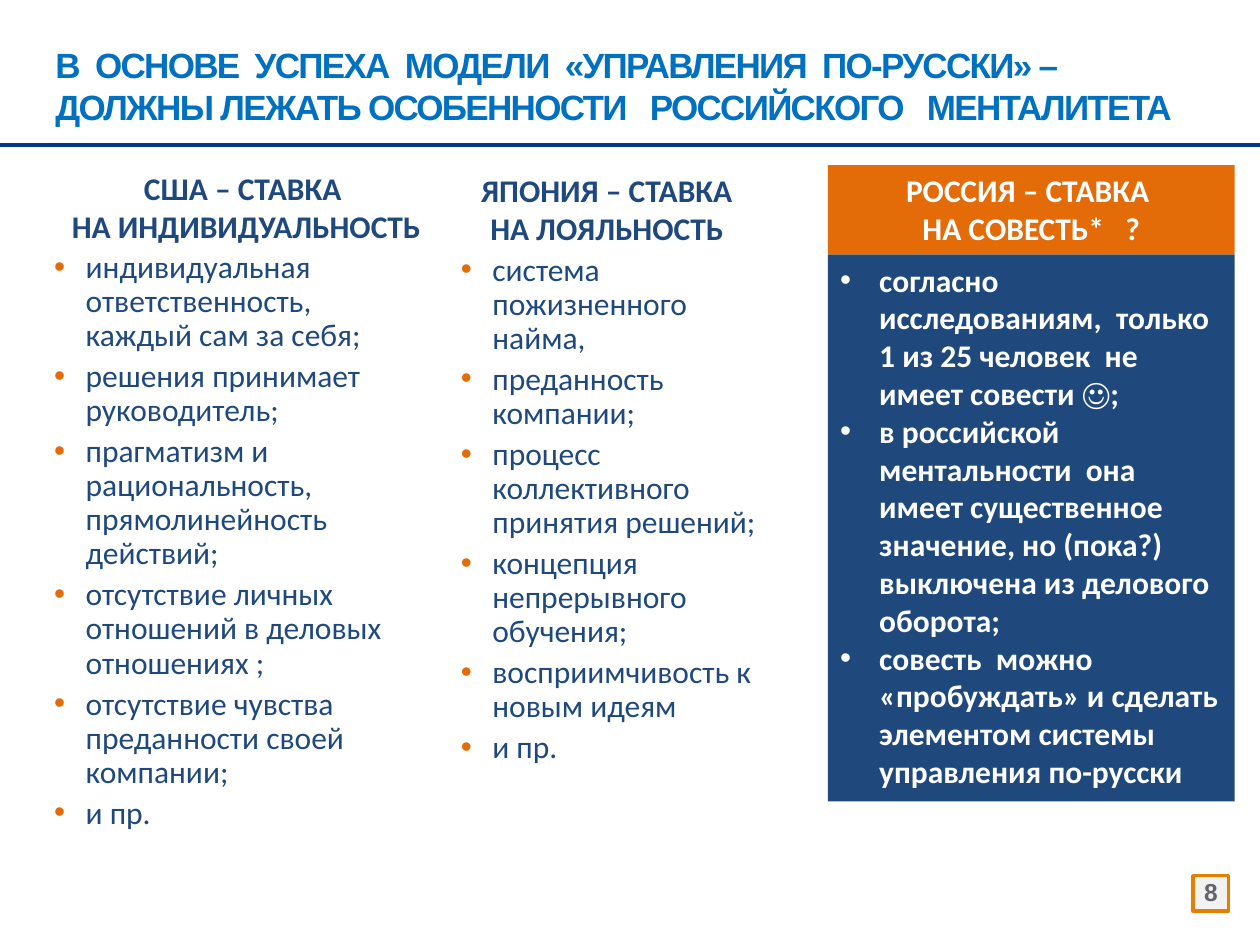
from dataclasses import dataclass
from typing import Optional

from lxml.etree import SubElement
from pptx import Presentation
from pptx.dml.color import RGBColor
from pptx.enum.shapes import MSO_CONNECTOR, MSO_SHAPE
from pptx.enum.text import MSO_ANCHOR, MSO_AUTO_SIZE, PP_ALIGN
from pptx.oxml.ns import qn
from pptx.util import Inches, Pt

NAVY, ORANGE, WHITE = "1F497D", "E36C09", "FFFFFF"


@dataclass
class TextStyle:
    color: str
    size: float = 18
    font: str = "Calibri"
    bold: bool = True
    tracking: float = 0


@dataclass
class ParagraphStyle:
    align: PP_ALIGN = PP_ALIGN.LEFT
    margin: float = 0
    indent: float = 0
    line_spacing: float = 1
    before: float = 0
    bullet: bool = False
    bullet_color: Optional[str] = None


@dataclass
class Column:
    heading: str
    points: list[str]
    heading_margin: float
    point_align: PP_ALIGN


def rgb(color: str) -> RGBColor:
    return RGBColor.from_string(color)


def place(shape, left: float, top: float, width: float, height: float) -> None:
    shape.left, shape.top = Inches(left), Inches(top)
    shape.width, shape.height = Inches(width), Inches(height)


def prepare_frame(shape, anchor: MSO_ANCHOR = MSO_ANCHOR.TOP):
    frame = shape.text_frame
    frame.word_wrap = True
    frame.auto_size = MSO_AUTO_SIZE.NONE
    frame.vertical_anchor = anchor
    return frame


def format_paragraph(paragraph, style: ParagraphStyle) -> None:
    properties = paragraph._p.get_or_add_pPr()
    properties.set("marL", str(Inches(style.margin)))
    properties.set("indent", str(Inches(style.indent)))
    if style.bullet:
        if style.bullet_color:
            bullet_color = SubElement(properties, qn("a:buClr"))
            SubElement(bullet_color, qn("a:srgbClr"), val=style.bullet_color)
        SubElement(properties, qn("a:buFont"), typeface="Arial")
        SubElement(properties, qn("a:buChar"), char="•")
    else:
        SubElement(properties, qn("a:buNone"))
    paragraph.alignment = style.align
    paragraph.line_spacing = style.line_spacing
    paragraph.space_before = Pt(style.before)


def write(frame, index: int, text: str, style: ParagraphStyle, look: TextStyle) -> None:
    paragraph = frame.add_paragraph() if index else frame.paragraphs[0]
    format_paragraph(paragraph, style)
    for number, line in enumerate(text.split("\n")):
        if number:
            paragraph.add_line_break()
        run = paragraph.add_run()
        run.text = line
        run.font.name, run.font.size, run.font.bold = look.font, Pt(look.size), look.bold
        run.font.color.rgb = rgb(look.color)
        if look.tracking:
            run._r.get_or_add_rPr().set("spc", str(round(look.tracking * 100)))


def write_column(shape, column: Column) -> None:
    frame = prepare_frame(shape)
    heading_style = ParagraphStyle(PP_ALIGN.CENTER, column.heading_margin)
    write(frame, 0, column.heading, heading_style, TextStyle(NAVY))
    point_style = ParagraphStyle(column.point_align, 0.38, -0.25, 0.9, 4, True, ORANGE)
    for index, point in enumerate(column.points, 1):
        write(frame, index, point, point_style, TextStyle(NAVY, bold=False))


def add_panel(slide, left: float, top: float, width: float, height: float, fill: str,
              line: Optional[str] = None):
    panel = slide.shapes.add_shape(
        MSO_SHAPE.RECTANGLE, Inches(left), Inches(top), Inches(width), Inches(height))
    panel.shadow.inherit = False
    panel.fill.solid()
    panel.fill.fore_color.rgb = rgb(fill)
    if line:
        panel.line.color.rgb = rgb(line)
        panel.line.width = Pt(2)
    else:
        panel.line.fill.background()
    return panel


def add_rule(slide, top: float) -> None:
    rule = slide.shapes.add_connector(
        MSO_CONNECTOR.STRAIGHT, 0, Inches(top), Inches(10), Inches(top))
    rule.line.color.rgb = rgb("003A8E")
    rule.line.width = Pt(2.5)
    SubElement(rule._element.spPr, qn("a:effectLst"))


def add_page_number(slide, number: str) -> None:
    badge = add_panel(slide, 9.47, 6.95, 0.28, 0.28, "F2F2F2", "E47F00")
    frame = prepare_frame(badge, MSO_ANCHOR.MIDDLE)
    frame.word_wrap = False
    frame.margin_left = frame.margin_right = Inches(0.08)
    frame.margin_top = frame.margin_bottom = Inches(0.08)
    write(frame, 0, number, ParagraphStyle(PP_ALIGN.CENTER, line_spacing=0.9),
          TextStyle("626469", 14, "Arial"))


USA = Column(
    "США – СТАВКА \nНА ИНДИВИДУАЛЬНОСТЬ",
    [
        "индивидуальная ответственность, \nкаждый сам за себя;",
        "решения принимает руководитель;",
        "прагматизм и рациональность, прямолинейность действий;",
        "отсутствие личных отношений в деловых отношениях ;",
        "отсутствие чувства преданности своей компании;",
        "и пр.",
    ],
    0.12,
    PP_ALIGN.LEFT,
)
JAPAN = Column(
    "ЯПОНИЯ – СТАВКА \nНА ЛОЯЛЬНОСТЬ ",
    [
        "система пожизненного найма, ",
        "преданность компании;",
        "процесс коллективного принятия решений;",
        "концепция непрерывного обучения; ",
        "восприимчивость к новым идеям",
        "и пр.",
    ],
    0,
    PP_ALIGN.LEFT,
)
RUSSIA_HEADING = "РОССИЯ – СТАВКА \nНА СОВЕСТЬ*   ?"
RUSSIA_POINTS = [
    "согласно исследованиям,  только 1 из 25 человек  не имеет совести ☺;",
    "в российской ментальности  она имеет существенное значение, но (пока?) "
    "выключена из делового оборота;",
    "совесть  можно «пробуждать» и сделать элементом системы управления по-русски",
]
TITLE = ("В  ОСНОВЕ  УСПЕХА  МОДЕЛИ  «УПРАВЛЕНИЯ  ПО-РУССКИ» – \n"
         "ДОЛЖНЫ ЛЕЖАТЬ ОСОБЕННОСТИ   РОССИЙСКОГО   МЕНТАЛИТЕТА")


def main() -> None:
    deck = Presentation()
    deck.slide_width, deck.slide_height = Inches(10), Inches(7.5)
    slide = deck.slides.add_slide(deck.slide_layouts[1])

    add_rule(slide, 1.15)
    add_page_number(slide, "8")

    title = slide.shapes.title
    place(title, 0.34, 0.21, 9.31, 0.85)
    write(prepare_frame(title, MSO_ANCHOR.BOTTOM), 0, TITLE, ParagraphStyle(),
          TextStyle("0070C0", 20, "Arial", tracking=-1))

    usa = slide.placeholders[1]
    place(usa, 0.2, 1.29, 3.39, 5.31)
    write_column(usa, USA)

    japan = slide.shapes.add_textbox(
        Inches(3.43), Inches(1.31), Inches(2.83), Inches(4.89))
    write_column(japan, JAPAN)

    russia = prepare_frame(add_panel(slide, 6.57, 2.02, 3.23, 4.34, NAVY))
    for index, point in enumerate(RUSSIA_POINTS):
        write(russia, index, point, ParagraphStyle(margin=0.31, indent=-0.31, bullet=True),
              TextStyle(WHITE))

    russia_header = prepare_frame(add_panel(slide, 6.57, 1.31, 3.23, 0.71, ORANGE))
    write(russia_header, 0, RUSSIA_HEADING, ParagraphStyle(PP_ALIGN.CENTER), TextStyle(WHITE))

    deck.save("out.pptx")


if __name__ == "__main__":
    main()
